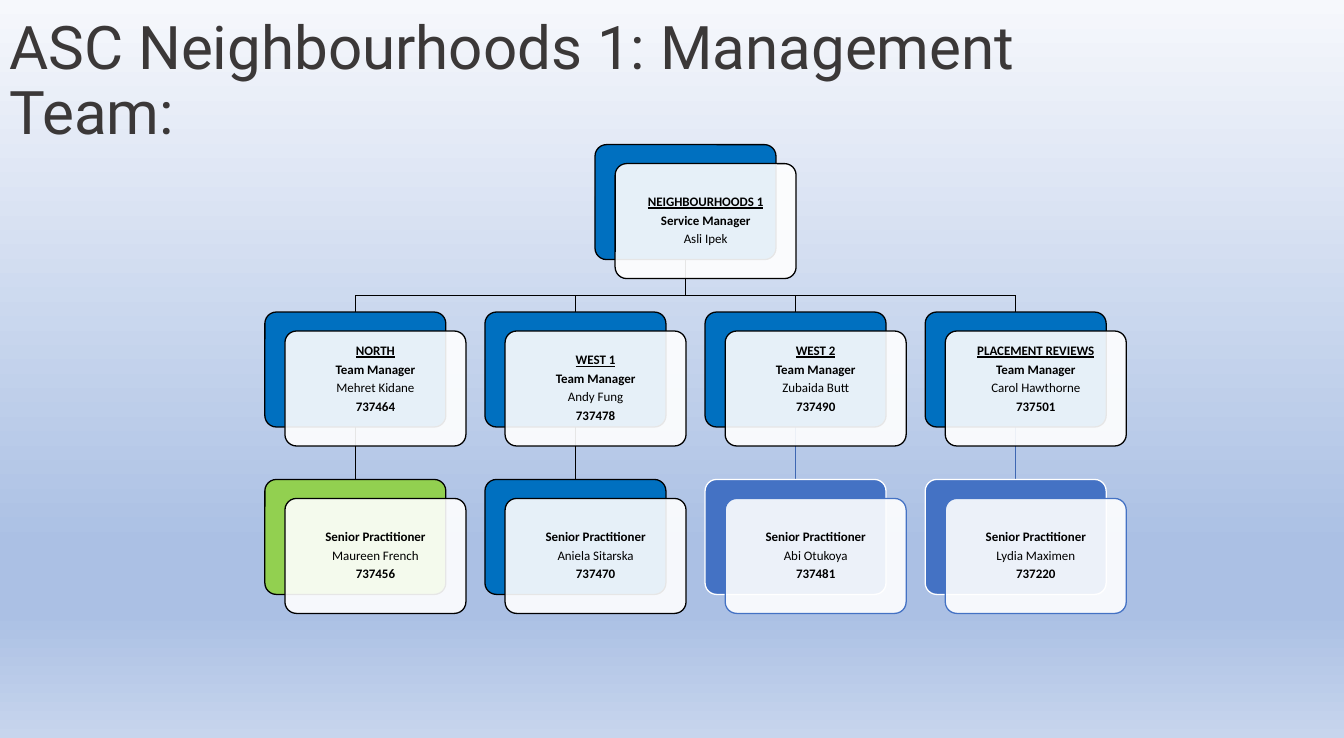
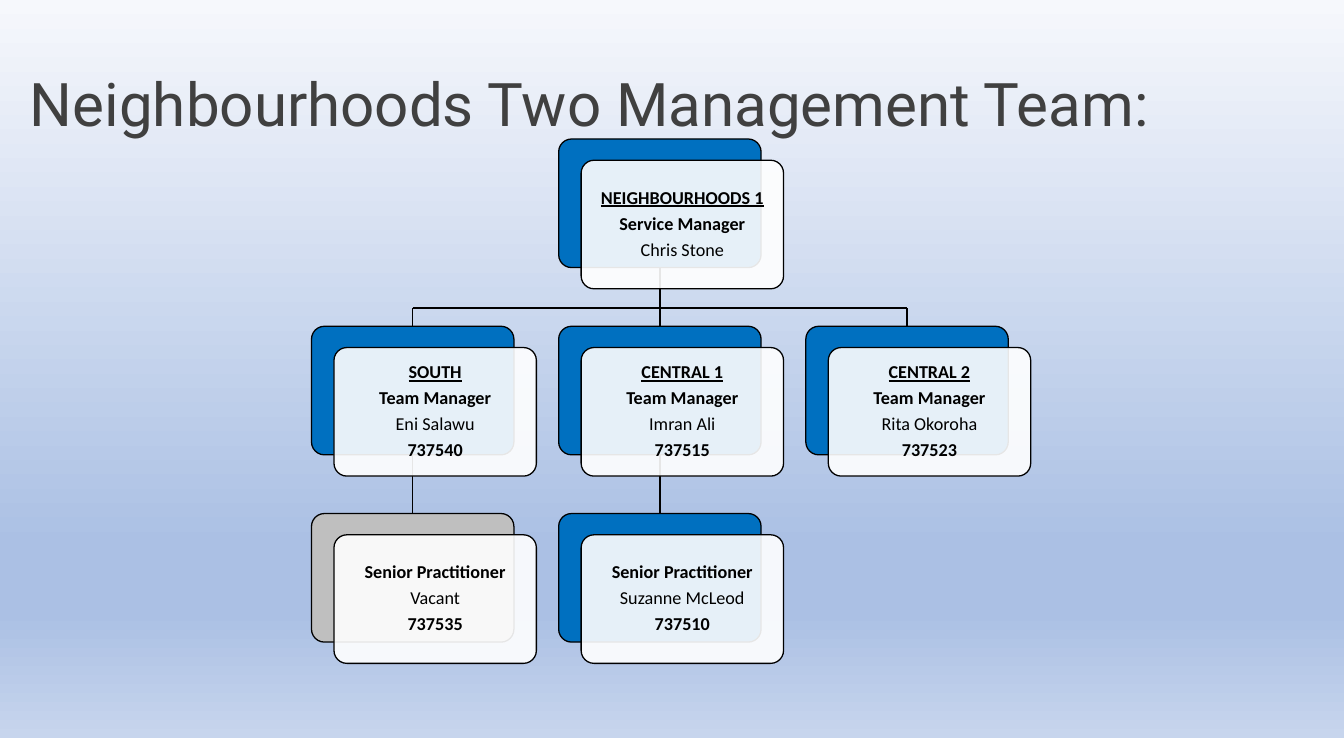
"""Build two organisation charts of neighbourhood management teams."""
from dataclasses import dataclass
from typing import NamedTuple, Optional

from lxml import etree
from pptx import Presentation
from pptx.dml.color import RGBColor
from pptx.enum.shapes import MSO_CONNECTOR as CONNECTOR, MSO_SHAPE as SHAPE
from pptx.enum.text import MSO_ANCHOR as ANCHOR, MSO_AUTO_SIZE as AUTO_SIZE, PP_ALIGN as ALIGN
from pptx.oxml.ns import qn
from pptx.util import Inches, Pt

BLACK, WHITE = "000000", "FFFFFF"
BACKGROUND_STOPS = [(0, "F6F8FC"), (74, "ABC0E4"), (83, "ABC0E4"), (100, "C7D5ED")]
TITLE_FONT, TITLE_SIZE = "Roboto", 46.4
CARD_FONT = "Calibri"
LINE_SPACING = 0.9
TITLE_ONLY_LAYOUT = 5


class Palette(NamedTuple):
    """Colours of one box: back fill, back outline, card outline, connector."""
    fill: str
    outline: str = BLACK
    card_outline: str = BLACK
    connector: str = BLACK


BLUE = Palette("0070C0")
GREEN = Palette("92D050")
GREY = Palette("BFBFBF")
PERIWINKLE = Palette("4472C4", WHITE, "4472C4", "3E67B2")


@dataclass
class Member:
    """One person in the chart."""
    role: str
    name: str
    phone: str = ""
    unit: str = ""
    palette: Palette = BLUE
    space_below: float = 0


@dataclass
class Branch:
    """A team manager and the senior practitioner below, if any."""
    manager: Member
    senior: Optional[Member] = None


@dataclass
class Grid:
    """Box geometry in inches, scaled from the box width."""
    left: float
    top: float
    width: float
    column_step: float
    font_size: int
    inset: float

    @property
    def height(self):
        """Return the box height."""
        return 0.635 * self.width

    def column(self, index):
        """Return the left edge of a column."""
        return self.left + index * self.column_step

    def centre(self, index):
        """Return the middle of a column."""
        return self.column(index) + self.width / 2

    def row(self, index):
        """Return the top edge of a row."""
        return self.top + index * 0.925 * self.width

    def bottom(self, index):
        """Return the bottom edge of a row."""
        return self.row(index) + self.height


def colour(value):
    """Turn a hex string into a colour."""
    return RGBColor.from_string(value)


def set_background(master):
    """Give the master the vertical gradient that all slides share."""
    fill = master.background.fill
    fill.gradient()
    fill.gradient_angle = 270
    stops = master.element.find(".//" + qn("a:gsLst"))
    for stop in list(stops):
        stops.remove(stop)
    for position, value in BACKGROUND_STOPS:
        stop = etree.SubElement(stops, qn("a:gs"), pos=str(position * 1000))
        etree.SubElement(stop, qn("a:srgbClr"), val=value)


def add_title(slide, text, box, text_colour):
    """Place and format the slide title."""
    title = slide.shapes.title
    title.left, title.top, title.width, title.height = map(Inches, box)
    frame = title.text_frame
    frame.text = text
    frame.auto_size = AUTO_SIZE.NONE
    frame.vertical_anchor = ANCHOR.MIDDLE
    paragraph = frame.paragraphs[0]
    paragraph.alignment = ALIGN.LEFT
    paragraph.line_spacing = LINE_SPACING
    font = paragraph.runs[0].font
    font.name, font.size = TITLE_FONT, Pt(TITLE_SIZE)
    font.color.rgb = colour(text_colour)


def add_line(slide, start, end, line_colour=BLACK):
    """Draw a straight one-point connector without a shadow."""
    connector = slide.shapes.add_connector(CONNECTOR.STRAIGHT, *map(Inches, start + end))
    connector.line.color.rgb = colour(line_colour)
    connector.line.width = Pt(1)
    etree.SubElement(connector.element.spPr, qn("a:effectLst"))


def add_box(slide, grid, left, top, fill, outline):
    """Draw a rounded box."""
    box = slide.shapes.add_shape(
        SHAPE.ROUNDED_RECTANGLE, *map(Inches, (left, top, grid.width, grid.height)))
    box.adjustments[0] = 0.1
    box.shadow.inherit = False
    box.fill.solid()
    box.fill.fore_color.rgb = colour(fill)
    box.line.color.rgb = colour(outline)
    box.line.width = Pt(1)
    return box


def write_card(card, grid, member):
    """Write a member's details centred on the card."""
    frame = card.text_frame
    frame.word_wrap = True
    frame.vertical_anchor = ANCHOR.MIDDLE
    frame.margin_left = frame.margin_right = frame.margin_top = Inches(grid.inset)
    frame.margin_bottom = Inches(grid.inset + member.space_below)
    lines = [member.unit, member.role, member.name, member.phone]
    frame.text = "\n".join(line for line in lines if line)
    for paragraph in frame.paragraphs:
        paragraph.alignment = ALIGN.CENTER
        paragraph.line_spacing = LINE_SPACING
        paragraph.space_after = Pt(0.35 * grid.font_size)
        font = paragraph.runs[0].font
        font.name, font.size = CARD_FONT, Pt(grid.font_size)
        font.color.rgb = colour(BLACK)
        font.bold = paragraph.text != member.name
        font.underline = paragraph.text == member.unit


def add_member(slide, grid, column, row, member):
    """Draw a coloured box with a translucent card in front."""
    left, top = grid.column(column), grid.row(row)
    palette = member.palette
    add_box(slide, grid, left, top, palette.fill, palette.outline)
    card = add_box(slide, grid, left + grid.width / 9, top + 0.105 * grid.width,
                   WHITE, palette.card_outline)
    white = card.fill._xPr.find(qn("a:solidFill"))[0]
    etree.SubElement(white, qn("a:alpha"), val="90000")
    write_card(card, grid, member)


def add_lines(slide, grid, branches):
    """Draw the trunk, the crossbar and the drops to each box."""
    last = len(branches) - 1
    root_x = grid.centre(last / 2)
    bar_y = grid.bottom(0) + 0.2 * grid.width
    add_line(slide, (root_x, grid.bottom(0)), (root_x, bar_y))
    add_line(slide, (grid.centre(0), bar_y), (grid.centre(last), bar_y))
    for column, branch in enumerate(branches):
        x = grid.centre(column)
        add_line(slide, (x, bar_y), (x, grid.row(1)))
        if branch.senior:
            add_line(slide, (x, grid.bottom(1)), (x, grid.row(2)),
                     branch.senior.palette.connector)


def add_chart_of_team(slide, grid, head, branches):
    """Draw the whole organisation chart."""
    add_lines(slide, grid, branches)
    add_member(slide, grid, (len(branches) - 1) / 2, 0, head)
    for column, branch in enumerate(branches):
        add_member(slide, grid, column, 1, branch.manager)
        if branch.senior:
            add_member(slide, grid, column, 2, branch.senior)


def head_of(name):
    """Return the service manager."""
    return Member("Service Manager", name, unit="NEIGHBOURHOODS 1")


def manager(unit, name, phone, space_below=0):
    """Return a team manager."""
    return Member("Team Manager", name, phone, unit, space_below=space_below)


def senior(name, phone, palette=BLUE):
    """Return a senior practitioner."""
    return Member("Senior Practitioner", name, phone, palette=palette)


def main():
    """Build and save the presentation."""
    presentation = Presentation()
    presentation.slide_width, presentation.slide_height = Inches(14.41), Inches(7.91)
    set_background(presentation.slide_master)
    layout = presentation.slide_layouts[TITLE_ONLY_LAYOUT]

    slide = presentation.slides.add_slide(layout)
    add_title(slide, "ASC Neighbourhoods 1: Management Team:", (0, 0.12, 12.43, 1.53), "3B3838")
    add_chart_of_team(slide, Grid(2.84, 1.55, 1.94, 2.36, 10, 0.04), head_of("Asli Ipek"), [
        Branch(manager("NORTH", "Mehret Kidane", "737464", 0.2),
               senior("Maureen French", "737456", GREEN)),
        Branch(manager("WEST 1", "Andy Fung", "737478"),
               senior("Aniela Sitarska", "737470")),
        Branch(manager("WEST 2", "Zubaida Butt", "737490", 0.2),
               senior("Abi Otukoya", "737481", PERIWINKLE)),
        Branch(manager("PLACEMENT REVIEWS", "Carol Hawthorne", "737501", 0.2),
               senior("Lydia Maximen", "737220", PERIWINKLE)),
    ])

    slide = presentation.slides.add_slide(layout)
    add_title(slide, "Neighbourhoods Two Management Team:", (0.22, 0.33, 13.2, 1.63), "404040")
    add_chart_of_team(slide, Grid(3.34, 1.49, 2.17, 2.65, 14, 0.06), head_of("Chris Stone"), [
        Branch(manager("SOUTH", "Eni Salawu", "737540"), senior("Vacant", "737535", GREY)),
        Branch(manager("CENTRAL 1", "Imran Ali", "737515"), senior("Suzanne McLeod", "737510")),
        Branch(manager("CENTRAL 2", "Rita Okoroha", "737523")),
    ])

    presentation.save("out.pptx")


if __name__ == "__main__":
    main()
